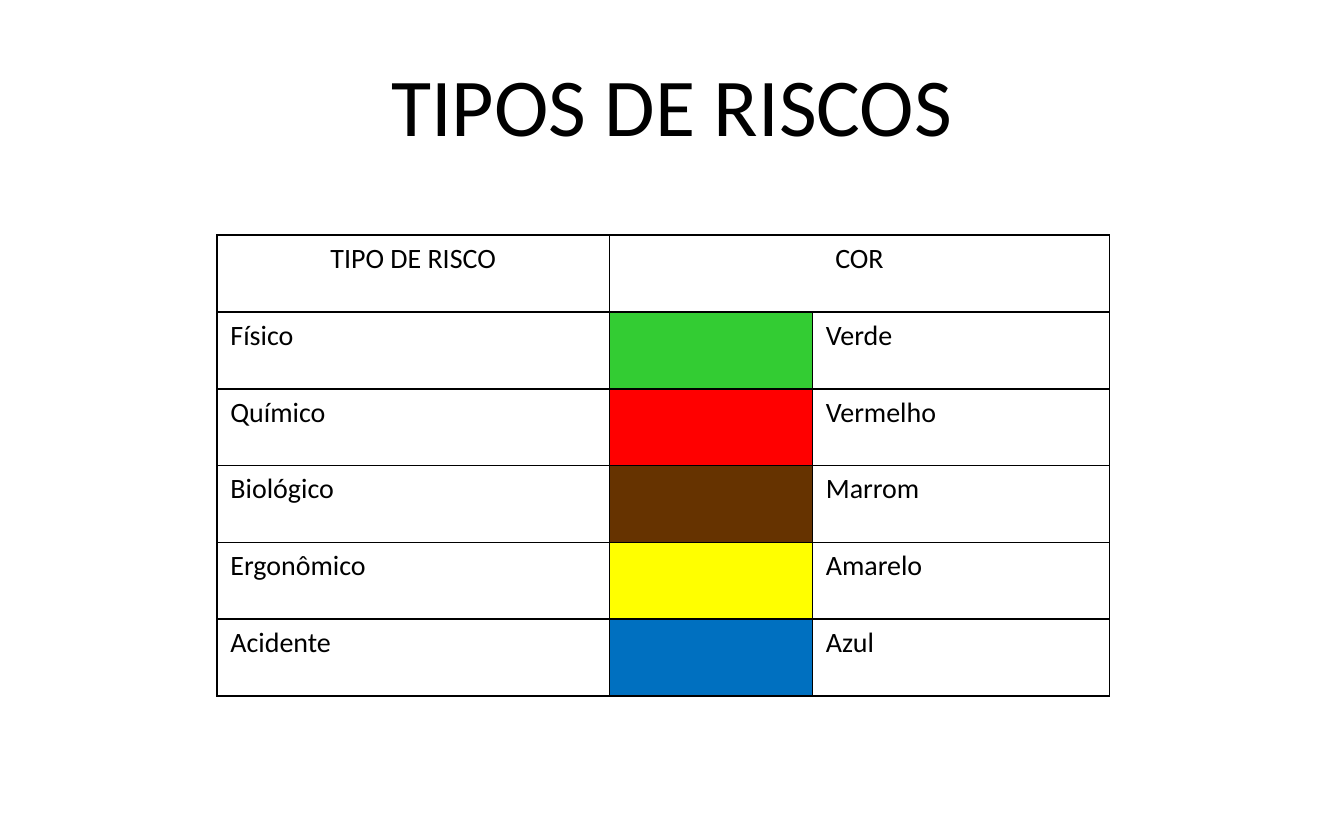
import pptx
import pptx.dml.color
import pptx.enum.text
import pptx.oxml
import pptx.oxml.ns
import pptx.util
from lxml import etree

Pt = pptx.util.Pt
CENTER = pptx.enum.text.PP_ALIGN.CENTER
LEFT = pptx.enum.text.PP_ALIGN.LEFT
FONT = "Calibri"
BLACK = "000000"
HEADINGS = ("TIPO DE RISCO", "COR", "")
RISKS = (
    ("Físico", "33CC33", "Verde"),
    ("Químico", "FF0000", "Vermelho"),
    ("Biológico", "663300", "Marrom"),
    ("Ergonômico", "FFFF00", "Amarelo"),
    ("Acidente", "0070C0", "Azul"),
)
COLUMN_WIDTHS = (210.25, 108.75, 159.25)
ROW_HEIGHT = 41.15


def color(value):
    return pptx.dml.color.RGBColor.from_string(value)


def write(text_frame, text, size, alignment):
    text_frame.text = text
    paragraph = text_frame.paragraphs[0]
    paragraph.alignment = alignment
    paragraph.font.size = Pt(size)
    for run in paragraph.runs:
        run.font.size = Pt(size)
        run.font.name = FONT
        run.font.color.rgb = color(BLACK)


def add_title(slide, text):
    title = slide.shapes.add_textbox(Pt(36), Pt(18), Pt(648), Pt(75))
    title.text_frame.word_wrap = True
    title.text_frame.vertical_anchor = pptx.enum.text.MSO_ANCHOR.MIDDLE
    write(title.text_frame, text, 44, CENTER)


def add_borders(cell):
    """Outline all four sides; borders must precede the fill in the XML."""
    properties = cell._tc.get_or_add_tcPr()
    for index, side in enumerate(("lnL", "lnR", "lnT", "lnB")):
        line = etree.Element(pptx.oxml.ns.qn(f"a:{side}"), w=str(Pt(1)))
        fill = etree.SubElement(line, pptx.oxml.ns.qn("a:solidFill"))
        etree.SubElement(fill, pptx.oxml.ns.qn("a:srgbClr"), val=BLACK)
        properties.insert(index, line)


def format_cell(cell, text, alignment=LEFT, fill=None):
    write(cell.text_frame, text, 15, alignment)
    if fill:
        cell.fill.solid()
        cell.fill.fore_color.rgb = color(fill)
    else:
        cell.fill.background()
    add_borders(cell)


def add_risk_table(slide):
    row_count = len(RISKS) + 1
    table = slide.shapes.add_table(
        row_count, len(COLUMN_WIDTHS), Pt(116.25), Pt(126),
        Pt(sum(COLUMN_WIDTHS)), Pt(ROW_HEIGHT * row_count)).table
    table.first_row = False
    table.horz_banding = False
    for column, width in zip(table.columns, COLUMN_WIDTHS):
        column.width = Pt(width)
    for row in table.rows:
        row.height = Pt(ROW_HEIGHT)

    for column, heading in enumerate(HEADINGS):
        format_cell(table.cell(0, column), heading, CENTER)
    table.cell(0, 1).merge(table.cell(0, 2))
    for row, (risk, fill, color_name) in enumerate(RISKS, start=1):
        format_cell(table.cell(row, 0), risk)
        format_cell(table.cell(row, 1), "", fill=fill)
        format_cell(table.cell(row, 2), color_name)


def main():
    presentation = pptx.Presentation()
    presentation.slide_width = Pt(720)
    presentation.slide_height = Pt(450)
    slide = presentation.slides.add_slide(presentation.slide_layouts[6])
    add_title(slide, "TIPOS DE RISCOS")
    add_risk_table(slide)
    presentation.save("out.pptx")


if __name__ == "__main__":
    main()
